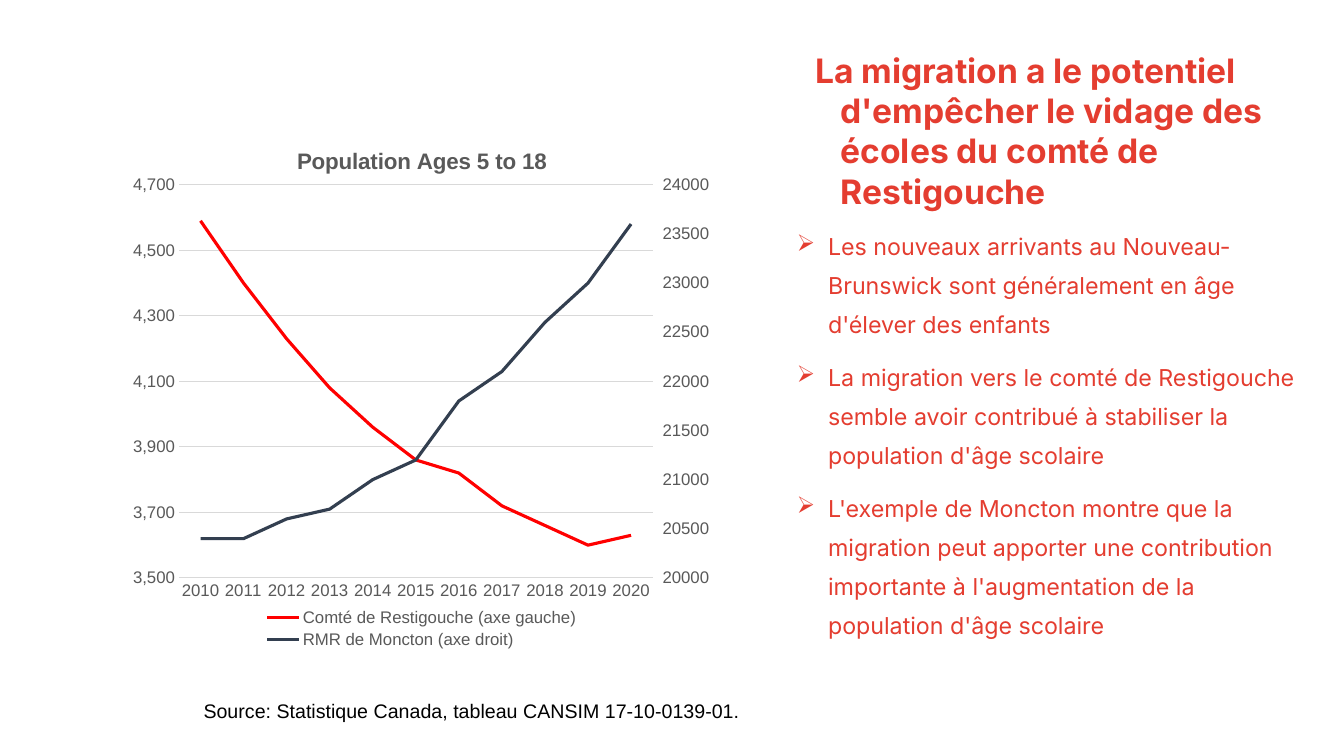
"""Build the slide on migration and school-age population in Restigouche and Moncton."""
from copy import deepcopy

from lxml import etree
from pptx import Presentation
from pptx.chart.axis import ValueAxis
from pptx.chart.data import CategoryChartData
from pptx.dml.color import RGBColor
from pptx.enum.chart import XL_CHART_TYPE, XL_LEGEND_POSITION, XL_TICK_MARK
from pptx.enum.text import MSO_ANCHOR, MSO_AUTO_SIZE, PP_ALIGN
from pptx.oxml.ns import qn
from pptx.util import Cm, Pt

LINE_CHART = XL_CHART_TYPE.LINE
BOTTOM = XL_LEGEND_POSITION.BOTTOM
NO_TICK, TICK_OUT = XL_TICK_MARK.NONE, XL_TICK_MARK.OUTSIDE
TOP, LEFT = MSO_ANCHOR.TOP, PP_ALIGN.LEFT
NO_FIT = MSO_AUTO_SIZE.NONE

COLORS = {"accent": "E43D30", "black": "000000", "label": "595959",
          "grid": "D9D9D9", "restigouche": "FF0000", "moncton": "333F50"}
POINTS = [
    "Les nouveaux arrivants au Nouveau-Brunswick sont généralement en âge "
    "d'élever des enfants",
    "La migration vers le comté de Restigouche semble avoir contribué à "
    "stabiliser la population d'âge scolaire",
    "L'exemple de Moncton montre que la migration peut apporter une "
    "contribution importante à l'augmentation de la population d'âge scolaire",
]
RESTIGOUCHE = [4590, 4400, 4230, 4080, 3960, 3860, 3820, 3720, 3660, 3600, 3630]
MONCTON = [20400, 20400, 20600, 20700, 21000, 21200, 21800, 22100, 22600, 23000, 23600]


def style_font(font, name, size, color, bold=False):
    font.name, font.size, font.bold = name, Pt(size), bold
    font.color.rgb = RGBColor.from_string(COLORS[color])


def place(element, index, **settings):
    for old in element.findall(qn("c:layout")):
        element.remove(old)
    layout = etree.Element(qn("c:layout"))
    manual = etree.SubElement(layout, qn("c:manualLayout"))
    for tag, value in settings.items():
        etree.SubElement(manual, qn(f"c:{tag}")).set("val", str(value))
    element.insert(index, layout)


prs = Presentation()
prs.slide_width, prs.slide_height = Cm(33.87), Cm(19.05)
slide = prs.slides.add_slide(prs.slide_layouts[5])

title = slide.shapes.title
title.left, title.top, title.width, title.height = Cm(19.66), Cm(1.12), Cm(12.93), Cm(2.44)
title.text_frame.text = ("La migration a le potentiel d'empêcher le vidage des "
                         "écoles du comté de Restigouche")
title.text_frame.word_wrap = True
title.text_frame.auto_size = NO_FIT
title.text_frame.vertical_anchor = TOP
heading = title.text_frame.paragraphs[0]
heading.alignment, heading.line_spacing = LEFT, 1.0
heading_props = heading._p.get_or_add_pPr()
heading_props.set("marL", str(Cm(1.27)))
heading_props.set("indent", str(Cm(-0.64)))
style_font(heading.runs[0].font, "Inter", 24, "accent", True)

findings = slide.shapes.add_textbox(Cm(19.2), Cm(5.44), Cm(13.84), Cm(11.66)).text_frame
findings.word_wrap = True
for number, point in enumerate(POINTS):
    paragraph = findings.add_paragraph() if number else findings.paragraphs[0]
    paragraph.text = point
    paragraph.line_spacing = 1.4
    if number:
        paragraph.space_before = Pt(10)
    props = paragraph._p.get_or_add_pPr()
    props.set("marL", str(Cm(1.42)))
    props.set("indent", str(Cm(-0.79)))
    bullet_color = etree.SubElement(props, qn("a:buClr"))
    etree.SubElement(bullet_color, qn("a:srgbClr")).set("val", COLORS["accent"])
    etree.SubElement(props, qn("a:buChar")).set("char", "➢")
    style_font(paragraph.runs[0].font, "Inter", 16.6, "accent")

source = slide.shapes.add_textbox(Cm(4.88), Cm(17.48), Cm(23.77), Cm(0.86)).text_frame
source.word_wrap = True
source.text = "Source: Statistique Canada, tableau CANSIM 17-10-0139-01."
style_font(source.paragraphs[0].runs[0].font, "Arial", 14, "black")

population = CategoryChartData(number_format="#,##0")
population.categories = [str(year) for year in range(2010, 2021)]
population.add_series("Comté de Restigouche (axe gauche)", RESTIGOUCHE)
population.add_series("RMR de Moncton (axe droit)", MONCTON)
chart = slide.shapes.add_chart(LINE_CHART, Cm(3), Cm(3.05), Cm(15.11), Cm(13.39),
                               population).chart
style_font(chart.font, "Arial", 10, "black")

chart.has_title = True
chart.chart_title.include_in_layout = False
chart_heading = chart.chart_title.text_frame
chart_heading.text = "Population Ages 5 to 18"
style_font(chart_heading.paragraphs[0].runs[0].font, "Arial", 16, "label", True)
place(chart.chart_title._element, 1, xMode="edge", yMode="edge", x=0.29, y=0.04)

chart.has_legend = True
chart.legend.position = BOTTOM
chart.legend.include_in_layout = False
style_font(chart.legend.font, "Arial", 12, "label")
place(chart.legend._element, 1, xMode="edge", yMode="edge", x=0.23, y=0.91, w=0.55, h=0.09)

plot = chart.plots[0]
plot.vary_by_categories = False
for series, color in zip(plot.series, ("restigouche", "moncton")):
    series.smooth = False
    series.format.line.color.rgb = RGBColor.from_string(COLORS[color])
    series.format.line.width = Pt(2.25)

years, left_axis = chart.category_axis, chart.value_axis
years.major_tick_mark = NO_TICK
left_axis.has_major_gridlines = True
for line in (years.format.line, left_axis.major_gridlines.format.line):
    line.color.rgb = RGBColor.from_string(COLORS["grid"])
    line.width = Pt(0.75)
left_axis.format.line.fill.background()
for axis in (years, left_axis):
    style_font(axis.tick_labels.font, "Arial", 12, "label")

plot_area = left_axis._element.getparent()
left_lines = plot_area.find(qn("c:lineChart"))
right_lines = deepcopy(left_lines)
left_lines.remove(left_lines.findall(qn("c:ser"))[1])
right_lines.remove(right_lines.find(qn("c:ser")))
left_lines.addnext(right_lines)
right_value, right_years = deepcopy(left_axis._element), deepcopy(years._element)
plot_area.find(qn("c:valAx")).addnext(right_value)
right_value.addnext(right_years)

YEARS_ID, VALUE_ID = "50010", "50020"
for identifier, value in zip(right_lines.findall(qn("c:axId")), (YEARS_ID, VALUE_ID)):
    identifier.set("val", value)
for element, own, other in ((right_years, YEARS_ID, VALUE_ID),
                            (right_value, VALUE_ID, YEARS_ID)):
    element.find(qn("c:axId")).set("val", own)
    element.find(qn("c:crossAx")).set("val", other)
right_years.find(qn("c:delete")).set("val", "1")
right_value.find(qn("c:axPos")).set("val", "r")
right_value.find(qn("c:crosses")).set("val", "max")

right_axis = ValueAxis(right_value)
right_axis.has_major_gridlines = False
for axis, low, high, step, tick, number_format in (
        (left_axis, 3500, 4700, 200, NO_TICK, "#,##0"),
        (right_axis, 20000, 24000, 500, TICK_OUT, "General")):
    axis.minimum_scale, axis.maximum_scale, axis.major_unit = low, high, step
    axis.major_tick_mark, axis.minor_tick_mark = tick, NO_TICK
    axis.tick_labels.number_format = number_format
    axis.tick_labels.number_format_is_linked = False

place(plot_area, 0, layoutTarget="inner", xMode="edge", yMode="edge",
      x=0.1, y=0.12, w=0.79, h=0.74)

prs.save("out.pptx")
